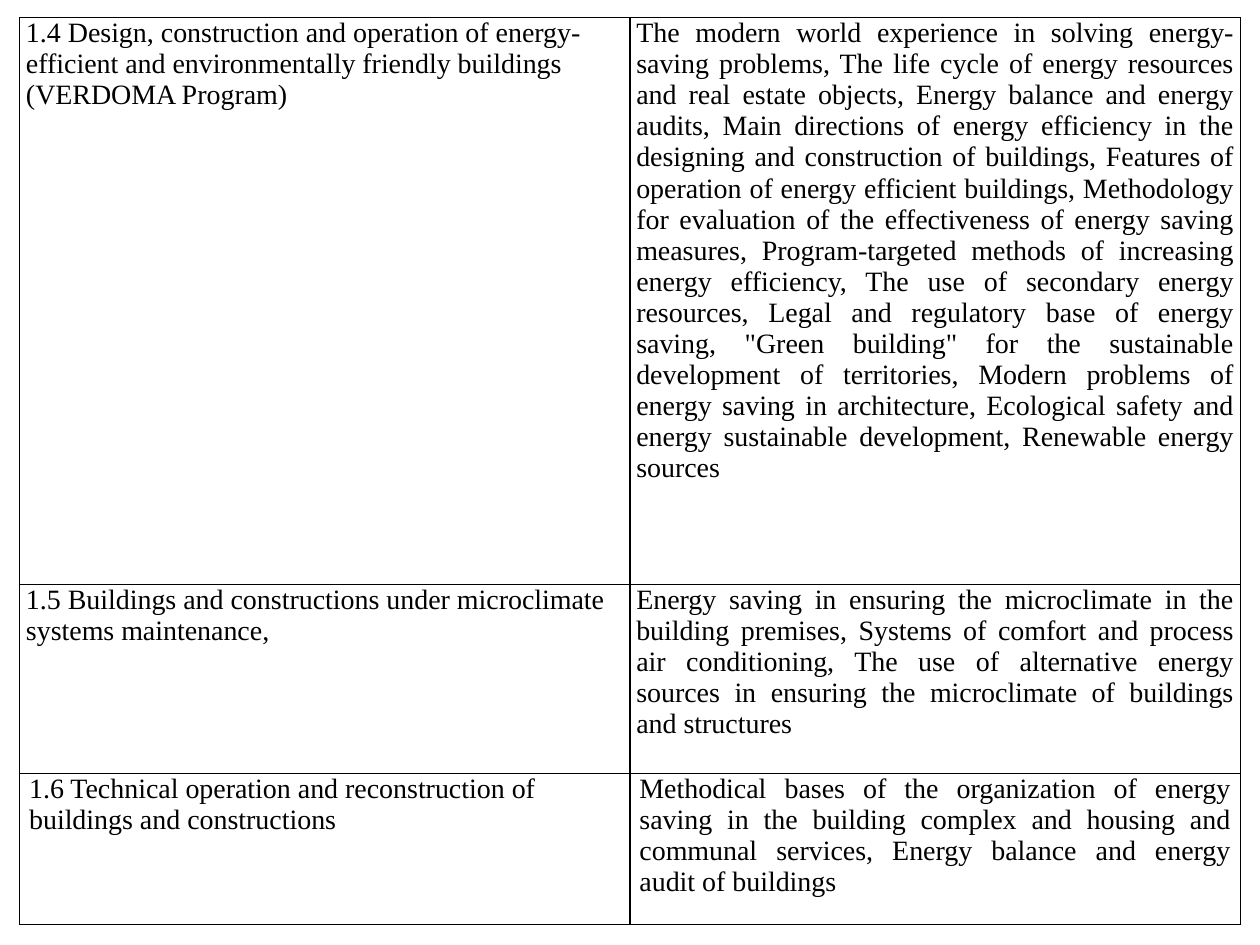
from dataclasses import dataclass

from lxml import etree
from pptx import Presentation
from pptx.dml.color import RGBColor
from pptx.enum.text import PP_ALIGN
from pptx.oxml.ns import qn
from pptx.util import Pt

LEFT, JUSTIFY = PP_ALIGN.LEFT, PP_ALIGN.JUSTIFY
BLANK_LAYOUT = 6


@dataclass(frozen=True)
class Theme:
    font: str = "Times New Roman"
    size: float = 16
    ink: str = "000000"
    paper: str = "FFFFFF"
    border: float = 1


MODULES = [
    (324, 3.6,
     "1.4 Design, construction and operation of energy-efficient and "
     "environmentally friendly buildings (VERDOMA Program)",
     "The modern world experience in solving energy- saving problems, "
     "The life cycle of energy resources and real estate objects, "
     "Energy balance and energy audits, "
     "Main directions of energy efficiency in the designing and construction of buildings, "
     "Features of operation of energy efficient buildings, "
     "Methodology for evaluation of the effectiveness of energy saving measures, "
     "Program-targeted methods of increasing energy efficiency, "
     "The use of secondary energy resources, "
     "Legal and regulatory base of energy saving, "
     "\"Green building\" for the sustainable development of territories, "
     "Modern problems of energy saving in architecture, "
     "Ecological safety and energy sustainable development, "
     "Renewable energy sources"),
    (108, 3.6,
     "1.5 Buildings and constructions under microclimate\nsystems maintenance,",
     "Energy saving in ensuring the microclimate in the building premises, "
     "Systems of comfort and process air conditioning, "
     "The use of alternative energy sources in ensuring the microclimate "
     "of buildings and structures"),
    (86.4, 5.4,
     "1.6 Technical operation and reconstruction of\nbuildings and constructions",
     "Methodical bases of the organization of energy saving in the building "
     "complex and housing and communal services, "
     "Energy balance and energy audit of buildings"),
]


class SlideBuilder:
    def __init__(self, s, theme):
        self.s = s
        self.theme = theme

    def background(self):
        fill = self.s.background.fill
        fill.solid()
        fill.fore_color.rgb = RGBColor.from_string(self.theme.paper)

    def table(self, left, top, col_width, modules):
        height = sum(row[0] for row in modules)
        table = self.s.shapes.add_table(
            len(modules), 2, Pt(left), Pt(top), Pt(2 * col_width), Pt(height)).table
        table.first_row = False
        table.horz_banding = False
        for column in table.columns:
            column.width = Pt(col_width)
        for i, (row_height, inset, title, topics) in enumerate(modules):
            table.rows[i].height = Pt(row_height)
            self.cell(table.cell(i, 0), title, inset, LEFT)
            self.cell(table.cell(i, 1), topics, inset, JUSTIFY)

    def cell(self, cell, text, inset, align):
        cell.margin_left = cell.margin_right = Pt(inset)
        cell.margin_top = cell.margin_bottom = 0
        self.borders(cell)
        cell.fill.background()
        tf = cell.text_frame
        tf.text = text
        for p in tf.paragraphs:
            p.alignment = align
            for r in p.runs:
                r.font.name = self.theme.font
                r.font.size = Pt(self.theme.size)
                r.font.color.rgb = RGBColor.from_string(self.theme.ink)

    def borders(self, cell):
        tc_pr = cell._tc.get_or_add_tcPr()
        for side in ("lnL", "lnR", "lnT", "lnB"):
            line = etree.SubElement(tc_pr, qn(f"a:{side}"), w=str(Pt(self.theme.border)))
            fill = etree.SubElement(line, qn("a:solidFill"))
            etree.SubElement(fill, qn("a:srgbClr"), val=self.theme.ink)


def main():
    prs = Presentation()
    prs.slide_width, prs.slide_height = Pt(720), Pt(540)
    s = prs.slides.add_slide(prs.slide_layouts[BLANK_LAYOUT])
    builder = SlideBuilder(s, Theme())
    builder.background()
    builder.table(11.25, 10, 348.75, MODULES)
    prs.save("out.pptx")


if __name__ == "__main__":
    main()
